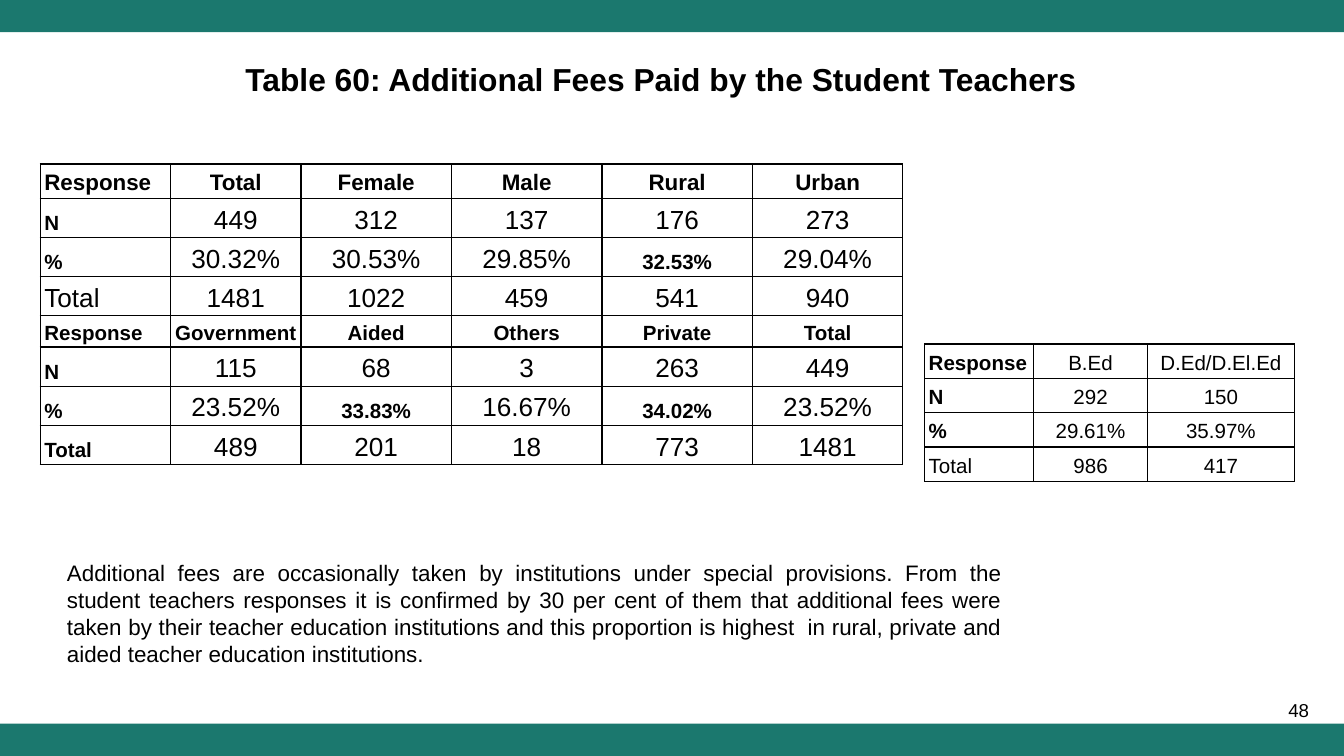
from lxml import etree
from pptx import Presentation
from pptx.dml.color import RGBColor
from pptx.enum.shapes import MSO_SHAPE
from pptx.enum.text import MSO_ANCHOR, PP_ALIGN
from pptx.oxml.ns import qn
from pptx.util import Inches, Pt

RECTANGLE = MSO_SHAPE.RECTANGLE
LEFT, CENTER, RIGHT, JUSTIFY = (
    PP_ALIGN.LEFT, PP_ALIGN.CENTER, PP_ALIGN.RIGHT, PP_ALIGN.JUSTIFY)
TOP, MIDDLE, BOTTOM = MSO_ANCHOR.TOP, MSO_ANCHOR.MIDDLE, MSO_ANCHOR.BOTTOM

COLORS = {"band": "1B786E", "text": "000000", "border": "000000", "cell": "FFFFFF"}
FONT = "Arial"
SLIDE_WIDTH, SLIDE_HEIGHT, BAND_HEIGHT = 10, 5.625, 0.24

# One letter per cell: H heading, B bold, n large number, r regular
CELL_STYLES = {
    "H": {"size": 12, "bold": True},
    "B": {"size": 11, "bold": True},
    "n": {"size": 14},
    "r": {"size": 11},
}

FEES_BY_GROUP = [
    (["Response", "Total", "Female", "Male", "Rural", "Urban"], "HHHHHH"),
    (["N", "449", "312", "137", "176", "273"], "Bnnnnn"),
    (["%", "30.32%", "30.53%", "29.85%", "32.53%", "29.04%"], "BnnnBn"),
    (["Total", "1481", "1022", "459", "541", "940"], "nnnnnn"),
    (["Response", "Government", "Aided", "Others", "Private", "Total"], "BBBBBB"),
    (["N", "115", "68", "3", "263", "449"], "Bnnnnn"),
    (["%", "23.52%", "33.83%", "16.67%", "34.02%", "23.52%"], "BnBnBn"),
    (["Total", "489", "201", "18", "773", "1481"], "Bnnnnn"),
]
FEES_BY_COURSE = [
    (["Response", "B.Ed", "D.Ed/D.El.Ed"], "Brr"),
    (["N", "292", "150"], "Brr"),
    (["%", "29.61%", "35.97%"], "Brr"),
    (["Total", "986", "417"], "rrr"),
]
SUMMARY = (
    "Additional fees are occasionally taken by institutions under special "
    "provisions. From the student teachers responses it is confirmed by 30 per "
    "cent of them that additional fees were taken by their teacher education "
    "institutions and this proportion is highest  in rural, private and aided "
    "teacher education institutions."
)


def rgb(name):
    return RGBColor.from_string(COLORS[name])


def write(frame, text, size, bold=False, align=LEFT, spacing=None):
    paragraph = frame.paragraphs[0]
    paragraph.alignment = align
    if spacing:
        paragraph.line_spacing = spacing
    run = paragraph.add_run()
    run.text = text
    run.font.name = FONT
    run.font.size = Pt(size)
    run.font.bold = bold
    run.font.color.rgb = rgb("text")


def set_margins(holder, horizontal, vertical):
    holder.margin_left = holder.margin_right = Inches(horizontal)
    holder.margin_top = holder.margin_bottom = Inches(vertical)


def add_band(slide, top):
    band = slide.shapes.add_shape(
        RECTANGLE, 0, Inches(top), Inches(SLIDE_WIDTH), Inches(BAND_HEIGHT))
    band.shadow.inherit = False
    band.fill.solid()
    band.fill.fore_color.rgb = rgb("band")
    band.line.fill.background()


def add_title(slide, text):
    title = slide.shapes.title
    title.left, title.top = Inches(0.57), Inches(0.2)
    title.width, title.height = Inches(8.7), Inches(0.78)
    frame = title.text_frame
    frame.vertical_anchor = MIDDLE
    set_margins(frame, 0.07, 0.07)
    write(frame, text, size=17, bold=True, align=CENTER)


def add_text(slide, text, box, margins, anchor=TOP, **text_format):
    frame = slide.shapes.add_textbox(*map(Inches, box)).text_frame
    frame.word_wrap = True
    frame.vertical_anchor = anchor
    set_margins(frame, *margins)
    write(frame, text, **text_format)


def add_borders(cell, width):
    properties = cell._tc.get_or_add_tcPr()
    for side in ("a:lnL", "a:lnR", "a:lnT", "a:lnB"):
        line = etree.SubElement(properties, qn(side), w=str(Pt(width)))
        fill = etree.SubElement(line, qn("a:solidFill"))
        etree.SubElement(fill, qn("a:srgbClr"), val=COLORS["border"])


def add_fee_table(slide, rows, left, top, widths, row_height, margins, border):
    table = slide.shapes.add_table(
        len(rows), len(widths), Inches(left), Inches(top),
        Inches(sum(widths)), Inches(row_height * len(rows))).table
    table.first_row = table.horz_banding = False
    for column, width in zip(table.columns, widths):
        column.width = Inches(width)
    for row, (values, styles) in zip(table.rows, rows):
        row.height = Inches(row_height)
        for index, (cell, value, style) in enumerate(zip(row.cells, values, styles)):
            add_borders(cell, border)
            cell.fill.solid()
            cell.fill.fore_color.rgb = rgb("cell")
            cell.vertical_anchor = BOTTOM
            set_margins(cell, *margins)
            write(cell.text_frame, value, align=CENTER if index else LEFT,
                  spacing=1.15, **CELL_STYLES[style])


def main():
    presentation = Presentation()
    presentation.slide_width = Inches(SLIDE_WIDTH)
    presentation.slide_height = Inches(SLIDE_HEIGHT)
    slide = presentation.slides.add_slide(presentation.slide_layouts[5])

    for top in (SLIDE_HEIGHT - BAND_HEIGHT, 0):
        add_band(slide, top)
    add_title(slide, "Table 60: Additional Fees Paid by the Student Teachers")
    add_fee_table(slide, FEES_BY_GROUP, 0.3, 1.22, [0.97] * 2 + [1.12] * 4,
                  row_height=0.23, margins=(0.03, 0.02), border=0.68)
    add_fee_table(slide, FEES_BY_COURSE, 6.88, 2.56, [0.81, 0.85, 1.09],
                  row_height=0.22, margins=(0.03, 0.03), border=0.75)
    add_text(slide, SUMMARY, (0.4, 4.06, 7.16, 1.01), (0.1, 0.1),
             size=12, align=JUSTIFY)
    add_text(slide, "48", (9.48, 5.18, 0.33, 0.2), (0.07, 0.04),
             anchor=MIDDLE, size=10, align=RIGHT)
    presentation.save("out.pptx")


if __name__ == "__main__":
    main()
